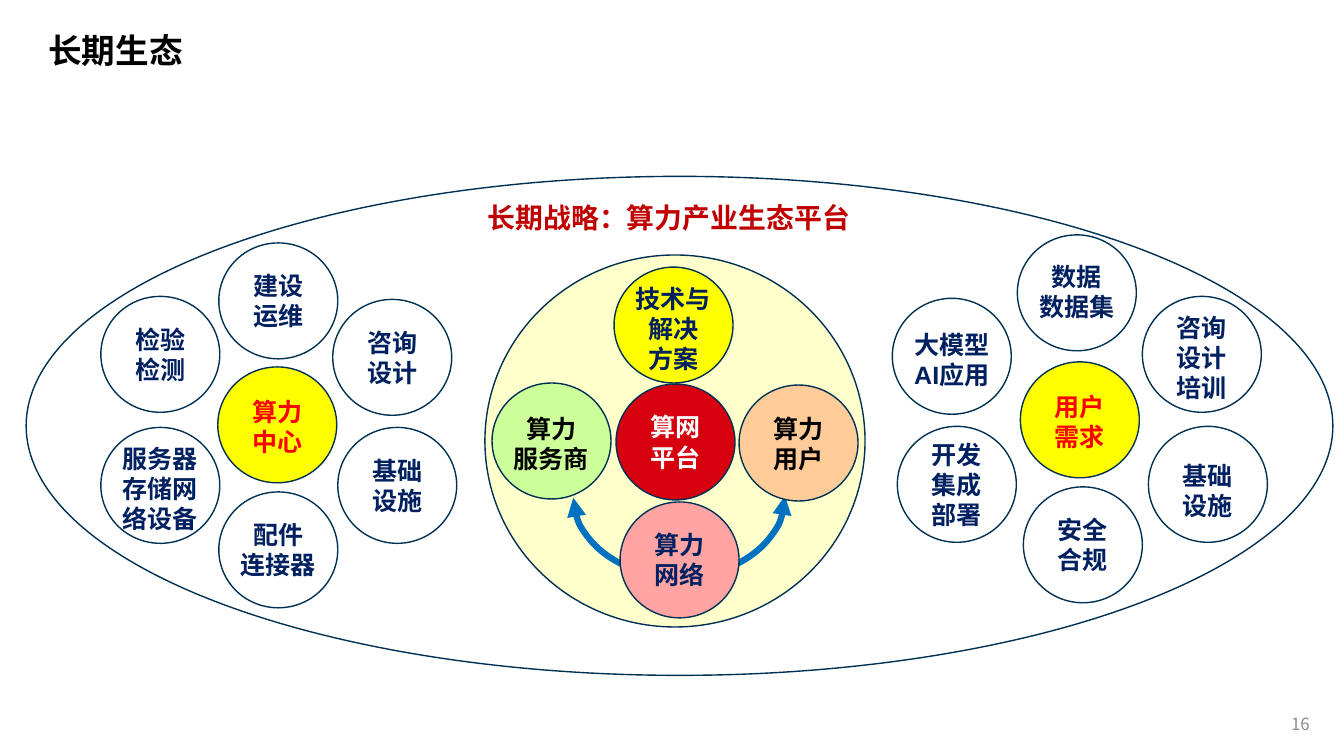
import pptx
import pptx.dml.color
import pptx.enum.shapes
import pptx.enum.text
import pptx.oxml
import pptx.oxml.ns
import pptx.util
from pptx.util import Inches

RGBColor = pptx.dml.color.RGBColor
Shape = pptx.enum.shapes.MSO_SHAPE
Align = pptx.enum.text.PP_ALIGN

OUTLINE = RGBColor(0x00, 0x31, 0x54)
NAVY = RGBColor(0x00, 0x20, 0x60)
WHITE = RGBColor(0xFF, 0xFF, 0xFF)
BLACK = RGBColor(0x00, 0x00, 0x00)
RED = RGBColor(0xFF, 0x00, 0x00)
DARK_RED = RGBColor(0xC0, 0x00, 0x00)
CRIMSON = RGBColor(0xD7, 0x00, 0x0F)
YELLOW = RGBColor(0xFF, 0xFF, 0x00)
CREAM = RGBColor(0xFF, 0xFF, 0xCC)
GREEN = RGBColor(0xCC, 0xFF, 0x99)
ORANGE = RGBColor(0xFF, 0xCC, 0x99)
PINK = RGBColor(0xFF, 0xA3, 0xA3)
BLUE = RGBColor(0x00, 0x70, 0xC0)
GRAY = RGBColor(0x8C, 0x8C, 0x8C)

SANS = "Noto Sans CJK SC"
CIRCLE_WIDTH, CIRCLE_HEIGHT = 1.18, 1.15

SUPPLY = [
    ("服务器\n存储网络设备", 0, 1.83, WHITE, NAVY, 0.03),
    ("配件\n连接器", 1.17, 2.47, WHITE, NAVY, 0),
    ("基础\n设施", 2.35, 1.83, WHITE, NAVY, 0),
    ("咨询\n设计", 2.3, 0.56, WHITE, NAVY, 0),
    ("建设\n运维", 1.17, 0, WHITE, NAVY, 0),
    ("检验\n检测", 0, 0.53, WHITE, NAVY, 0),
    ("算力\n中心", 1.16, 1.23, YELLOW, RED, 0.02),
]
PLATFORM = [
    ("算力\n服务商", 0.07, 1.27, GREEN, BLACK, 0.02),
    ("算力\n用户", 2.52, 1.29, ORANGE, BLACK, 0),
    ("算网\n平台", 1.3, 1.28, CRIMSON, WHITE, 0),
    ("技术与\n解决\n方案", 1.28, 0.12, YELLOW, NAVY, 0.03),
    ("算力\n网络", 1.34, 2.45, PINK, NAVY, 0),
]
DEMAND = [
    ("咨询\n设计\n培训", 2.48, 0.61, WHITE, NAVY, 0.03),
    ("安全\n合规", 1.3, 2.5, WHITE, NAVY, 0),
    ("数据\n数据集", 1.24, 0, WHITE, NAVY, -0.01),
    ("用户\n需求", 1.27, 1.26, YELLOW, RED, 0.02),
    ("开发\n集成\n部署", 0.05, 1.9, WHITE, NAVY, 0),
    ("大模型\nAI应用", 0, 0.63, WHITE, NAVY, 0.03),
    ("基础\n设施", 2.54, 1.9, WHITE, NAVY, 0.06),
]


def write_text(shape, text, size, color, font=SANS, bold=True,
               align=Align.CENTER, spacing=None, wrap=True):
    """Fill a shape with one formatted paragraph per line of text."""
    frame = shape.text_frame
    frame.auto_size = pptx.enum.text.MSO_AUTO_SIZE.NONE
    frame.word_wrap = wrap
    frame.vertical_anchor = pptx.enum.text.MSO_ANCHOR.MIDDLE
    frame.text = text
    for para in frame.paragraphs:
        para.alignment = align
        para.line_spacing = spacing
        for span in para.runs:
            span.font.name = font
            span.font.size = pptx.util.Pt(size)
            span.font.bold = bold
            span.font.color.rgb = color
            east_asian = pptx.oxml.parse_xml(
                f'<a:ea {pptx.oxml.ns.nsdecls("a")} typeface="{font}"/>')
            span.font._element.find(pptx.oxml.ns.qn("a:latin")).addnext(east_asian)


def add_ellipse(page, left, top, width, height, fill=None):
    """Draw an outlined ellipse, filled if a colour is given."""
    ellipse = page.shapes.add_shape(
        Shape.OVAL, Inches(left), Inches(top), Inches(width), Inches(height))
    ellipse.shadow.inherit = False
    if fill is None:
        ellipse.fill.background()
    else:
        ellipse.fill.solid()
        ellipse.fill.fore_color.rgb = fill
    ellipse.line.color.rgb = OUTLINE
    ellipse.line.width = pptx.util.Pt(1)
    return ellipse


def add_cluster(page, left, top, circles):
    """Place labelled circles relative to the corner of their cluster."""
    for text, across, down, fill, color, drop in circles:
        circle = add_ellipse(page, left + across, top + down,
                             CIRCLE_WIDTH, CIRCLE_HEIGHT, fill)
        frame = circle.text_frame
        frame.margin_left = frame.margin_right = 0
        frame.margin_top = Inches(max(2 * drop, 0))
        frame.margin_bottom = Inches(max(-2 * drop, 0))
        overlong = max(map(len, text.split("\n"))) > 4
        write_text(circle, text, 17.9, color, font="Arial",
                   spacing=pptx.util.Pt(21.5), wrap=overlong)


def add_network_arc(page, left, top, width, height):
    """Draw the two-headed arc that links the network to both sides."""
    arc = page.shapes.add_shape(
        Shape.ARC, Inches(left), Inches(top), Inches(width), Inches(height))
    arc.adjustments[0] = 162
    arc.adjustments[1] = 53.435
    arc.rotation = 90
    arc.shadow.inherit = False
    arc.fill.background()
    arc.line.color.rgb = BLUE
    arc.line.width = pptx.util.Pt(4.5)
    for end in ("headEnd", "tailEnd"):
        arc.line._get_or_add_ln().append(pptx.oxml.parse_xml(
            f'<a:{end} {pptx.oxml.ns.nsdecls("a")} type="triangle"/>'))


def add_platform(page, left, top, width, height):
    """Draw the central platform disc with its arc and circles."""
    add_ellipse(page, left, top, width, height, CREAM)
    add_network_arc(page, left + 1.12, top + 1.34, 1.61, 2.1)
    add_cluster(page, left, top, PLATFORM)


def add_label(page, left, top, width, height, text, size, color, **style):
    """Add a text box with formatted text."""
    box = page.shapes.add_textbox(
        Inches(left), Inches(top), Inches(width), Inches(height))
    write_text(box, text, size, color, **style)


def set_title(page, left, top, width, height, text):
    """Move and format the title placeholder."""
    title = page.shapes.title
    title.left, title.top = Inches(left), Inches(top)
    title.width, title.height = Inches(width), Inches(height)
    write_text(title, text, 24, BLACK, align=Align.LEFT)


def build_ecosystem_slide(deck):
    """Build the long-term ecosystem slide."""
    page = deck.slides.add_slide(deck.slide_layouts[5])
    set_title(page, 0.38, 0.25, 7.07, 0.5, "长期生态")
    add_label(page, 12.13, 6.98, 0.96, 0.4, "16", 12, GRAY,
              bold=False, align=Align.RIGHT)
    add_ellipse(page, 0.26, 1.75, 12.96, 4.95)
    add_cluster(page, 1, 2.41, SUPPLY)
    add_platform(page, 4.81, 2.53, 3.77, 3.69)
    add_cluster(page, 8.85, 2.33, DEMAND)
    add_label(page, 4.45, 1.94, 4.37, 0.44,
              "长期战略：算力产业生态平台", 19.9, DARK_RED)


def main():
    """Create and save the deck."""
    deck = pptx.Presentation()
    deck.slide_width, deck.slide_height = Inches(13.33), Inches(7.5)
    build_ecosystem_slide(deck)
    deck.save("out.pptx")


if __name__ == "__main__":
    main()
